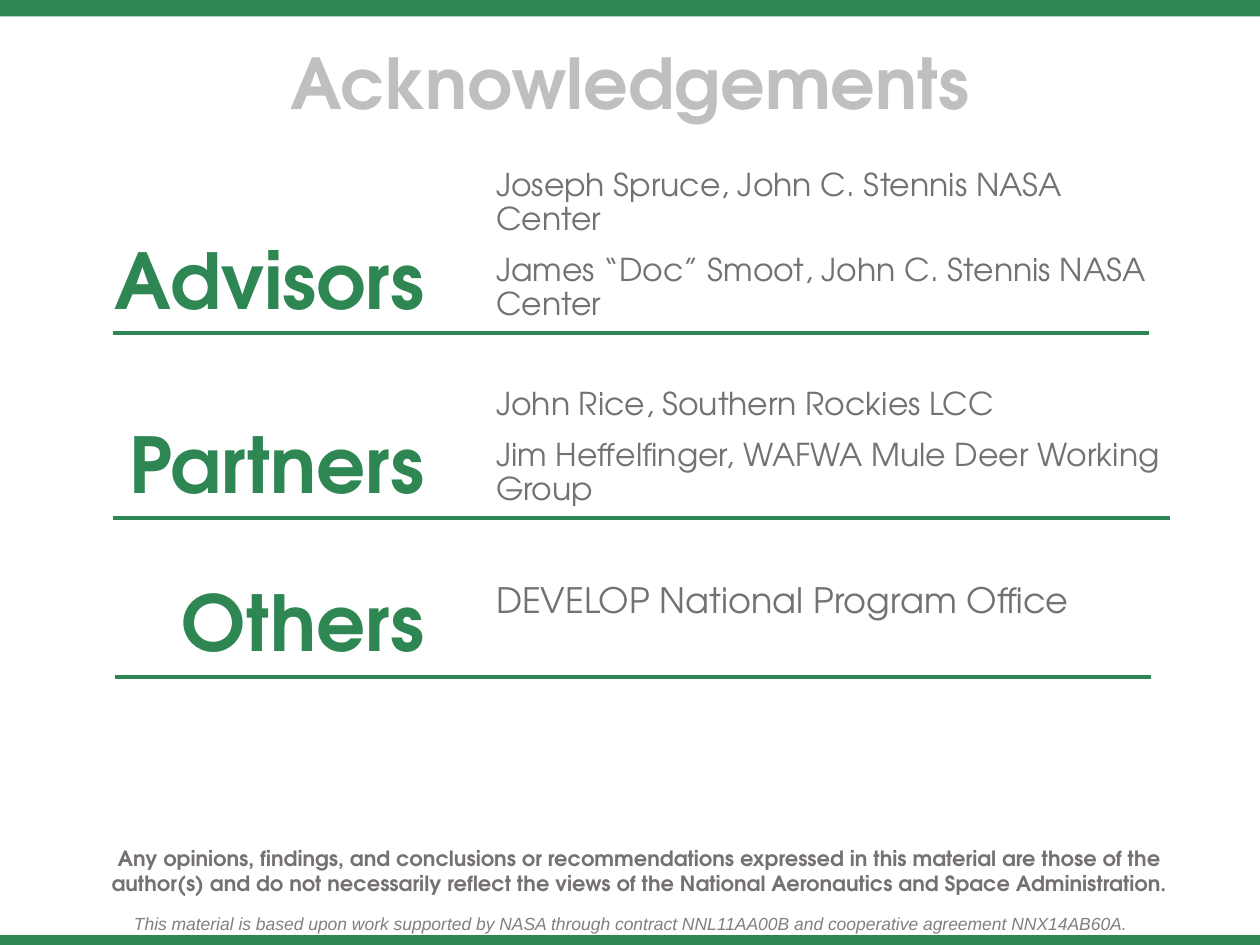
from lxml import etree
from pptx import Presentation
from pptx.dml.color import RGBColor
from pptx.enum.shapes import MSO_CONNECTOR, MSO_SHAPE
from pptx.enum.text import MSO_ANCHOR, PP_ALIGN
from pptx.oxml.ns import qn
from pptx.util import Cm, Pt

LEFT, CENTER, RIGHT = PP_ALIGN.LEFT, PP_ALIGN.CENTER, PP_ALIGN.RIGHT
TOP, BOTTOM = MSO_ANCHOR.TOP, MSO_ANCHOR.BOTTOM
RECT, STRAIGHT = MSO_SHAPE.RECTANGLE, MSO_CONNECTOR.STRAIGHT

COLORS = {"green": "2E8652", "title": "BFBFBF", "body": "767171", "credit": "808080"}
FONT = "TeX Gyre Adventor"
WIDTH, HEIGHT = 25.4, 19.05

# Content: lengths in cm
TITLE = "Acknowledgements"
SECTIONS = [
    {"label": "Advisors", "size": 18, "top": 3.28, "height": 3.43,
     "label_top": 4.57, "rule": (2.28, 23.16, 6.71),
     "names": ["Joseph Spruce, John C. Stennis NASA Center",
               "James “Doc” Smoot, John C. Stennis NASA Center"]},
    {"label": "Partners", "size": 18, "top": 7.7, "height": 2.74,
     "label_top": 8.28, "rule": (2.28, 23.59, 10.44),
     "names": ["John Rice, Southern Rockies LCC",
               "Jim Heffelfinger, WAFWA Mule Deer Working Group"]},
    {"label": "Others", "size": 20, "top": 11.63, "height": 1.96,
     "label_top": 11.46, "rule": (2.32, 23.2, 13.64),
     "names": ["DEVELOP National Program Office"]},
]
DISCLAIMER = ("Any opinions, findings, and conclusions or recommendations expressed "
              "in this material are those of the author(s) and do not necessarily "
              "reflect the views of the National Aeronautics and Space Administration.")
CREDIT = ("This material is based upon work supported by NASA through contract "
          "NNL11AA00B and cooperative agreement NNX14AB60A.")
BARS = [(0, 0.33), (18.85, 0.2)]  # top, height

prs = Presentation()
prs.slide_width, prs.slide_height = Cm(WIDTH), Cm(HEIGHT)
s = prs.slides.add_slide(prs.slide_layouts[6])


def rgb(name):
    return RGBColor.from_string(COLORS[name])


def add_text(lines, x, y, w, h, size, color, font=FONT, bold=False, italic=False,
             align=LEFT, anchor=TOP, spacing=None, before=0, indent=0):
    tf = s.shapes.add_textbox(Cm(x), Cm(y), Cm(w), Cm(h)).text_frame
    tf.word_wrap = True
    tf.vertical_anchor = anchor
    for i, line in enumerate(lines):
        p = tf.add_paragraph() if i else tf.paragraphs[0]
        p.alignment = align
        if spacing:
            p.line_spacing = spacing
        if i and before:
            p.space_before = Pt(before)
        if indent:
            p._p.get_or_add_pPr().set("marL", str(Cm(indent)))
        r = p.add_run()
        r.text = line
        r.font.name, r.font.size = font, Pt(size)
        r.font.bold, r.font.italic = bold, italic
        r.font.color.rgb = rgb(color)


def add_rule(x1, x2, y):
    line = s.shapes.add_connector(STRAIGHT, Cm(x1), Cm(y), Cm(x2), Cm(y))
    line.line.color.rgb = rgb("green")
    line.line.width = Pt(2.25)
    etree.SubElement(line._element.spPr, qn("a:effectLst"))


# Bars along the slide edges
for top, height in BARS:
    sp = s.shapes.add_shape(RECT, 0, Cm(top), Cm(WIDTH), Cm(height))
    sp.shadow.inherit = False
    sp.fill.solid()
    sp.fill.fore_color.rgb = rgb("green")
    sp.line.fill.background()

# Title and closing statements
add_text([CREDIT], 0, 18.29, WIDTH, 0.69, 10, "credit", font="Arial",
         italic=True, align=CENTER)
add_text([TITLE], 0.89, 0.66, 23.62, 1.96, 40, "title", bold=True,
         align=CENTER, anchor=BOTTOM)
add_text([DISCLAIMER], 1.02, 16.92, 22.99, 1.27, 12, "body", bold=True,
         align=CENTER, indent=0.76)

# Sections: label, names and rule
for sec in SECTIONS:
    add_text(sec["names"], 9.75, sec["top"], 14.2, sec["height"], sec["size"],
             "body", spacing=0.9, before=10)
    add_text([sec["label"]], 1.65, sec["label_top"], 7.16, 2.13, 44, "green",
             bold=True, align=RIGHT)
    add_rule(*sec["rule"])

prs.save("out.pptx")
